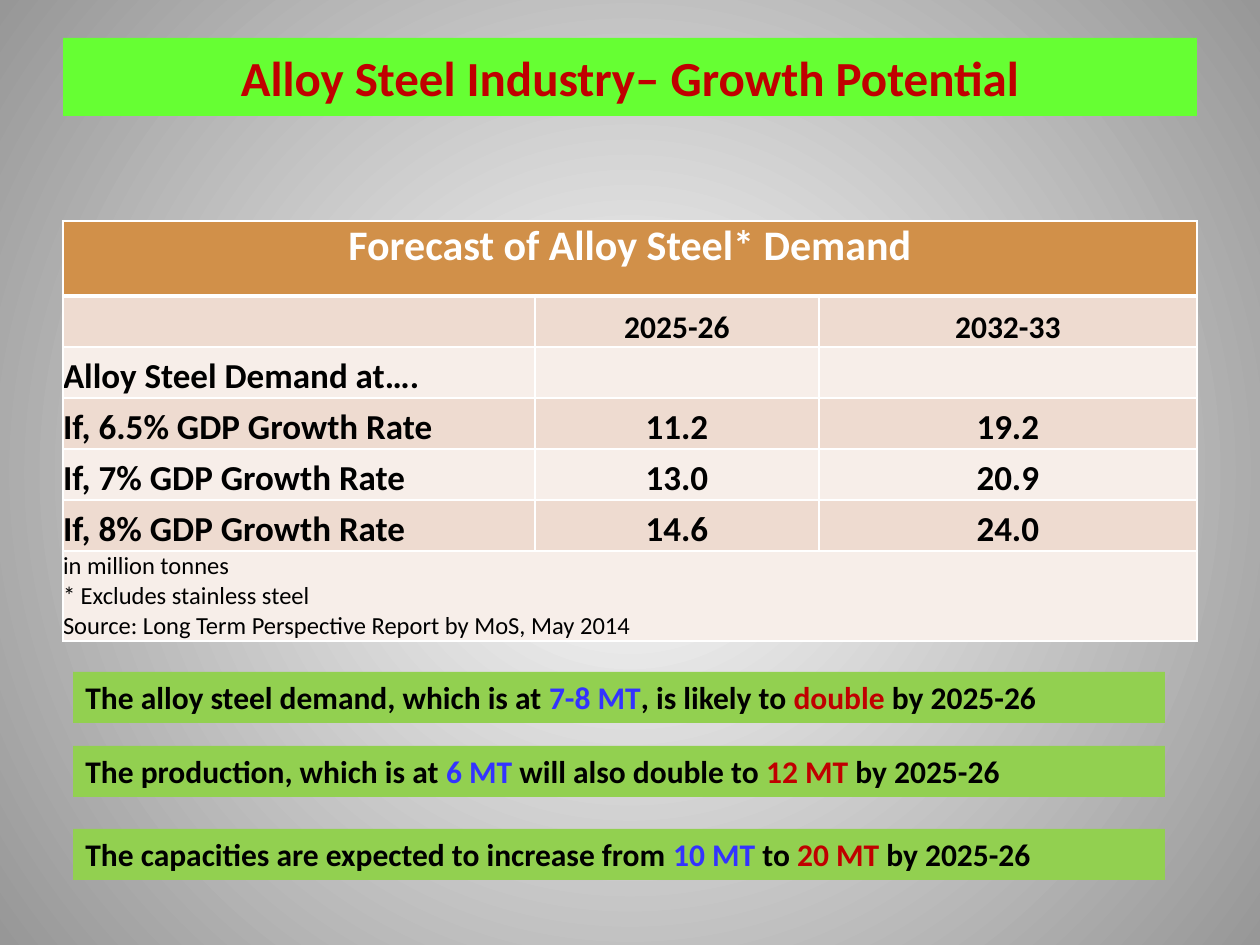
from lxml import etree
from pptx import Presentation
from pptx import util as u
from pptx.dml.color import RGBColor
from pptx.enum import shapes, text
from pptx.oxml.ns import qn

PX = u.Inches(1) // 126
BLACK, WHITE, RED, BLUE = "000000", "FFFFFF", "C00000", "3333FF"
LEFT, CENTER = text.PP_ALIGN.LEFT, text.PP_ALIGN.CENTER
TOP, MIDDLE, BOTTOM = (text.MSO_ANCHOR.TOP, text.MSO_ANCHOR.MIDDLE,
                       text.MSO_ANCHOR.BOTTOM)


def rgb(value):
    return RGBColor.from_string(value)


def px(*lengths):
    return [length * PX for length in lengths]


class SlideBuilder:
    font_name = "Calibri"
    bands = ("F7EEE9", "EEDBD0")

    def __init__(self, deck):
        self.slide = deck.slides.add_slide(deck.slide_layouts[5])

    def background(self, center, edge):
        """Fill the background with a circular gradient."""
        fill = self.slide.background.fill
        fill.gradient()
        for stop, color, position in zip(fill.gradient_stops, (center, edge), (0, 1)):
            stop.color.rgb = rgb(color)
            stop.position = position
        gradient = self.slide.element.find(".//" + qn("a:gradFill"))
        gradient.remove(gradient.find(qn("a:lin")))
        circle = etree.SubElement(gradient, qn("a:path"), path="circle")
        etree.SubElement(circle, qn("a:fillToRect"),
                         dict.fromkeys("ltrb", "50000"))

    def style(self, paragraph, size, color=None, bold=True, align=LEFT):
        paragraph.alignment = align
        font = paragraph.font
        font.name, font.size, font.bold = self.font_name, u.Pt(size), bold
        if color:
            font.color.rgb = rgb(color)

    def title(self, wording, box, fill):
        title = self.slide.shapes.title
        title.left, title.top, title.width, title.height = px(*box)
        title.fill.solid()
        title.fill.fore_color.rgb = rgb(fill)
        frame = title.text_frame
        frame.text = wording
        frame.auto_size = text.MSO_AUTO_SIZE.NONE
        frame.vertical_anchor = MIDDLE
        self.style(frame.paragraphs[0], 28, RED, align=CENTER)

    def banner(self, parts, box, fill):
        """Add a filled bar holding one line of (wording, color) parts."""
        bar = self.slide.shapes.add_shape(shapes.MSO_SHAPE.RECTANGLE, *px(*box))
        bar.shadow.inherit = False
        bar.fill.solid()
        bar.fill.fore_color.rgb = rgb(fill)
        bar.line.fill.background()
        frame = bar.text_frame
        frame.word_wrap = True
        frame.vertical_anchor = TOP
        line = frame.paragraphs[0]
        self.style(line, 18)
        for wording, color in parts:
            run = line.add_run()
            run.text = wording
            run.font.color.rgb = rgb(color)

    def table(self, corner, widths, heights):
        """Add a banded grid with white rules, a heavier one under row 0."""
        frame = self.slide.shapes.add_table(
            len(heights), len(widths), *px(*corner, sum(widths), sum(heights)))
        table = frame.table
        table.first_row = table.horz_banding = False
        for column, width in zip(table.columns, widths):
            column.width = width * PX
        for index, (row, height) in enumerate(zip(table.rows, heights)):
            row.height = height * PX
            for cell in row.cells:
                self.borders(cell, top=3 if index == 1 else 1,
                             bottom=3 if index == 0 else 1)
                self.cell_fill(cell, self.bands[index % 2])
        return table

    def borders(self, cell, top, bottom):
        properties = cell._tc.get_or_add_tcPr()
        for side, weight in (("L", 1), ("R", 1), ("T", top), ("B", bottom)):
            rule = etree.SubElement(properties, qn("a:ln" + side),
                                    w=str(u.Pt(weight)))
            solid = etree.SubElement(rule, qn("a:solidFill"))
            etree.SubElement(solid, qn("a:srgbClr"), val=WHITE)

    def cell_fill(self, cell, color):
        cell.fill.solid()
        cell.fill.fore_color.rgb = rgb(color)

    def cell(self, cell, wording, size, color=BLACK, bold=True,
             align=LEFT, anchor=BOTTOM):
        cell.margin_left = cell.margin_right = 0
        cell.margin_top = cell.margin_bottom = 0
        cell.vertical_anchor = anchor
        if wording:
            cell.text = wording
        for paragraph in cell.text_frame.paragraphs:
            self.style(paragraph, size, color, bold, align)


def add_forecast(builder):
    rows = [
        ("", "2025-26", "2032-33"),
        ("Alloy Steel Demand at….", "", ""),
        ("If, 6.5% GDP Growth Rate", "11.2", "19.2"),
        ("If, 7% GDP Growth Rate", "13.0", "20.9"),
        ("If, 8% GDP Growth Rate", "14.6", "24.0"),
    ]
    notes = ("in million tonnes\n* Excludes stainless steel\n"
             "Source: Long Term Perspective Report by MoS, May 2014")
    last = len(rows) + 1
    table = builder.table((63, 221), (472, 284, 378), [75] + [51] * len(rows) + [90])
    for index in (0, last):
        table.cell(index, 0).merge(table.cell(index, 2))

    heading = table.cell(0, 0)
    builder.cell_fill(heading, "D19049")
    builder.cell(heading, "Forecast of Alloy Steel* Demand", 24, WHITE,
                 align=CENTER, anchor=TOP)
    for r, row in enumerate(rows, 1):
        for c, wording in enumerate(row):
            builder.cell(table.cell(r, c), wording, 18 if r == 1 else 20,
                         align=CENTER if c else LEFT)
    builder.cell(table.cell(last, 0), notes, 14, bold=False)


def main():
    deck = Presentation()
    deck.slide_width, deck.slide_height = px(1260, 945)
    builder = SlideBuilder(deck)
    builder.background(WHITE, "979797")
    builder.title("Alloy Steel Industry– Growth Potential",
                  (63, 38, 1134, 78), "66FF33")
    add_forecast(builder)

    outlook = [
        (672, ("The alloy steel demand, which is at ", "7-8 MT",
               ", is likely to ", "double ", "by 2025-26")),
        (746, ("The production, which is at ", "6 MT ",
               "will also double to ", "12 MT ", "by 2025-26")),
        (829, ("The capacities are expected to increase from ", "10 MT",
               " to", " 20 MT", " by 2025-26")),
    ]
    colors = (BLACK, BLUE, BLACK, RED, BLACK)
    for top, wordings in outlook:
        builder.banner(zip(wordings, colors), (73, top, 1092, 51), "92D050")
    deck.save("out.pptx")


if __name__ == "__main__":
    main()
